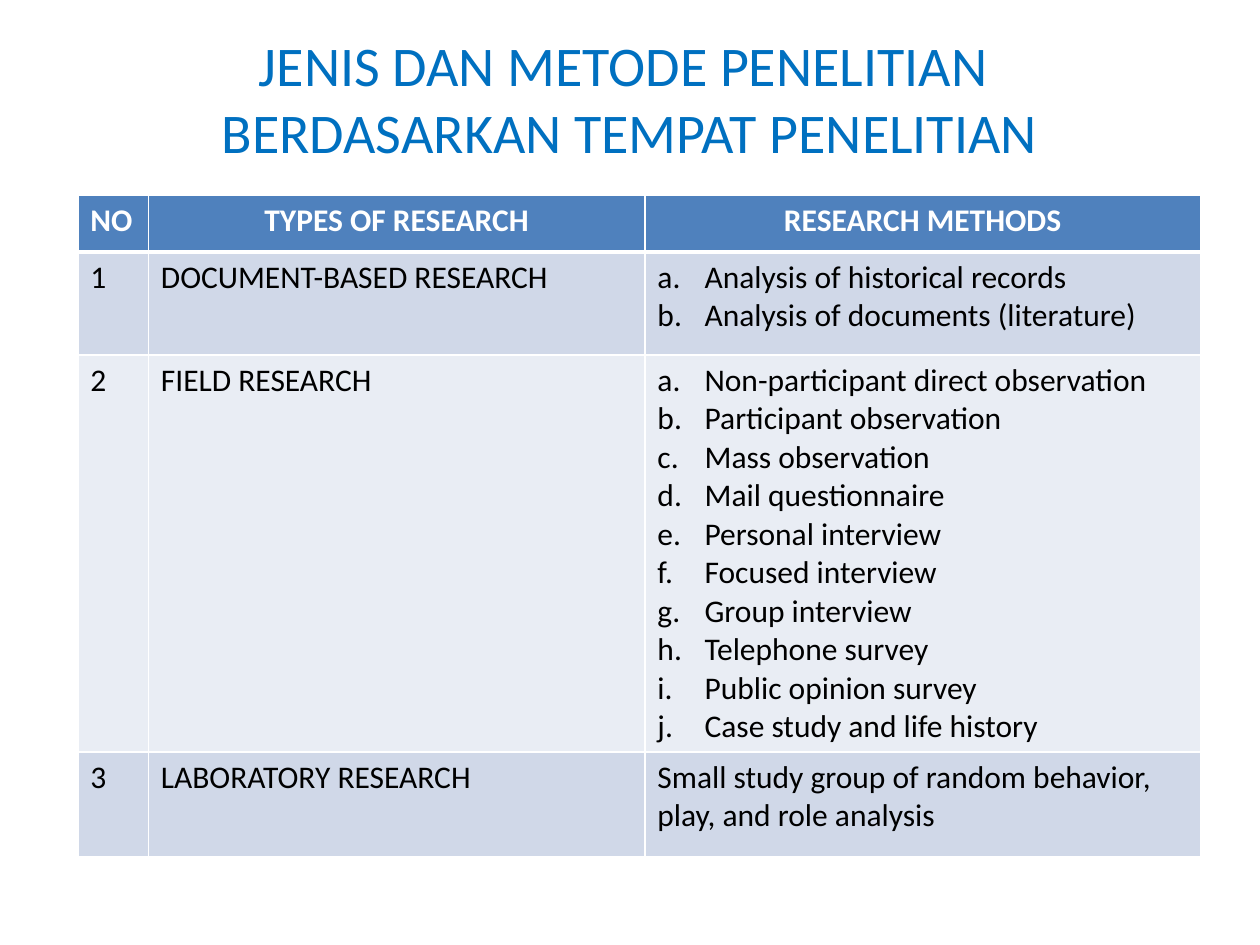
import dataclasses

import lxml.etree
import pptx
import pptx.dml.color
import pptx.enum.text
import pptx.oxml.ns
import pptx.util

Cm, Pt = pptx.util.Cm, pptx.util.Pt
ALIGN = pptx.enum.text.PP_ALIGN
qn = pptx.oxml.ns.qn


@dataclasses.dataclass(frozen=True)
class Theme:
    font: str = "Calibri"
    title_size: int = 32
    table_size: int = 18
    title: str = "0070C0"
    header: str = "4F81BD"
    bands: tuple = ("D0D8E8", "E9EDF4")
    white: str = "FFFFFF"
    text: str = "000000"
    rule: float = 1
    header_rule: float = 3


class SlideBuilder:
    def __init__(self, slide, theme):
        self.slide, self.theme = slide, theme

    def format_font(self, font, color, size, bold=False):
        values = {"name": self.theme.font, "size": Pt(size), "bold": bold}
        for name, value in values.items():
            setattr(font, name, value)
        font.color.rgb = pptx.dml.color.RGBColor.from_string(color)

    def title(self, lines, left, top, width, height):
        title = self.slide.shapes.title
        place = {"left": left, "top": top, "width": width, "height": height}
        for name, value in place.items():
            setattr(title, name, Cm(value))
        frame = title.text_frame
        layout = {
            "word_wrap": True,
            "auto_size": pptx.enum.text.MSO_AUTO_SIZE.NONE,
            "vertical_anchor": pptx.enum.text.MSO_ANCHOR.MIDDLE,
        }
        for name, value in layout.items():
            setattr(frame, name, value)
        paragraph = frame.paragraphs[0]
        paragraph.alignment = ALIGN.CENTER
        for index, line in enumerate(lines):
            if index:
                paragraph.add_line_break()
            run = paragraph.add_run()
            run.text = line
            self.format_font(run.font, self.theme.title, self.theme.title_size)

    def borders(self, cell, top, bottom):
        properties = cell._tc.get_or_add_tcPr()
        widths = {"L": self.theme.rule, "R": self.theme.rule, "T": top, "B": bottom}
        for side, width in widths.items():
            line = lxml.etree.SubElement(properties, qn(f"a:ln{side}"), w=str(Pt(width)))
            fill = lxml.etree.SubElement(line, qn("a:solidFill"))
            lxml.etree.SubElement(fill, qn("a:srgbClr"), val=self.theme.white)

    def letter(self, paragraph):
        """Number a paragraph a., b., c. with a hanging indent."""
        properties = paragraph._p.get_or_add_pPr()
        indent = Cm(0.95)
        properties.set("marL", str(indent))
        properties.set("indent", str(-indent))
        lxml.etree.SubElement(properties, qn("a:buFont"), typeface="+mj-lt")
        lxml.etree.SubElement(properties, qn("a:buAutoNum"), type="alphaLcPeriod")

    def cell(self, cell, content, row, column):
        theme, is_header = self.theme, row == 0
        self.borders(
            cell,
            top=theme.header_rule if row == 1 else theme.rule,
            bottom=theme.header_rule if is_header else theme.rule,
        )
        cell.fill.solid()
        fill = theme.header if is_header else theme.bands[(row - 1) % len(theme.bands)]
        cell.fill.fore_color.rgb = pptx.dml.color.RGBColor.from_string(fill)
        is_list = isinstance(content, list)
        lines = content if is_list else [content]
        frame = cell.text_frame
        for index, line in enumerate(lines):
            paragraph = frame.add_paragraph() if index else frame.paragraphs[0]
            paragraph.alignment = ALIGN.CENTER if is_header and column else ALIGN.LEFT
            if is_list:
                self.letter(paragraph)
            run = paragraph.add_run()
            run.text = line
            color = theme.white if is_header else theme.text
            self.format_font(run.font, color, theme.table_size, bold=is_header)

    def table(self, rows, left, top, widths, heights):
        table = self.slide.shapes.add_table(
            len(rows), len(widths), Cm(left), Cm(top), Cm(sum(widths)), Cm(sum(heights))
        ).table
        for column, width in zip(table.columns, widths):
            column.width = Cm(width)
        for row, height in zip(table.rows, heights):
            row.height = Cm(height)
        for r, contents in enumerate(rows):
            for c, content in enumerate(contents):
                self.cell(table.cell(r, c), content, r, c)


RESEARCH = [
    ("NO", "TYPES OF RESEARCH", "RESEARCH METHODS"),
    ("1", "DOCUMENT-BASED RESEARCH", [
        "Analysis of historical records",
        "Analysis of documents (literature)",
    ]),
    ("2", "FIELD RESEARCH", [
        "Non-participant direct observation",
        "Participant observation",
        "Mass observation",
        "Mail questionnaire",
        "Personal interview",
        "Focused interview",
        "Group interview",
        "Telephone survey",
        "Public opinion survey",
        "Case study and life history",
    ]),
    ("3", "LABORATORY RESEARCH",
     "Small study group of random behavior, play, and role analysis"),
]


def main():
    presentation = pptx.Presentation()
    presentation.slide_width, presentation.slide_height = Cm(25.4), Cm(19.05)
    title_only = presentation.slide_layouts[5]
    builder = SlideBuilder(presentation.slides.add_slide(title_only), Theme())

    # Heading
    builder.title(
        ["JENIS DAN METODE PENELITIAN ", "BERDASARKAN TEMPAT PENELITIAN"],
        left=1.27, top=0.76, width=22.86, height=2.41,
    )

    # Research types and their methods
    builder.table(
        RESEARCH, left=1.57, top=3.94,
        widths=[1.42, 10.01, 11.2], heights=[1.14, 2.08, 7.65, 2.11],
    )

    presentation.save("out.pptx")


if __name__ == "__main__":
    main()
